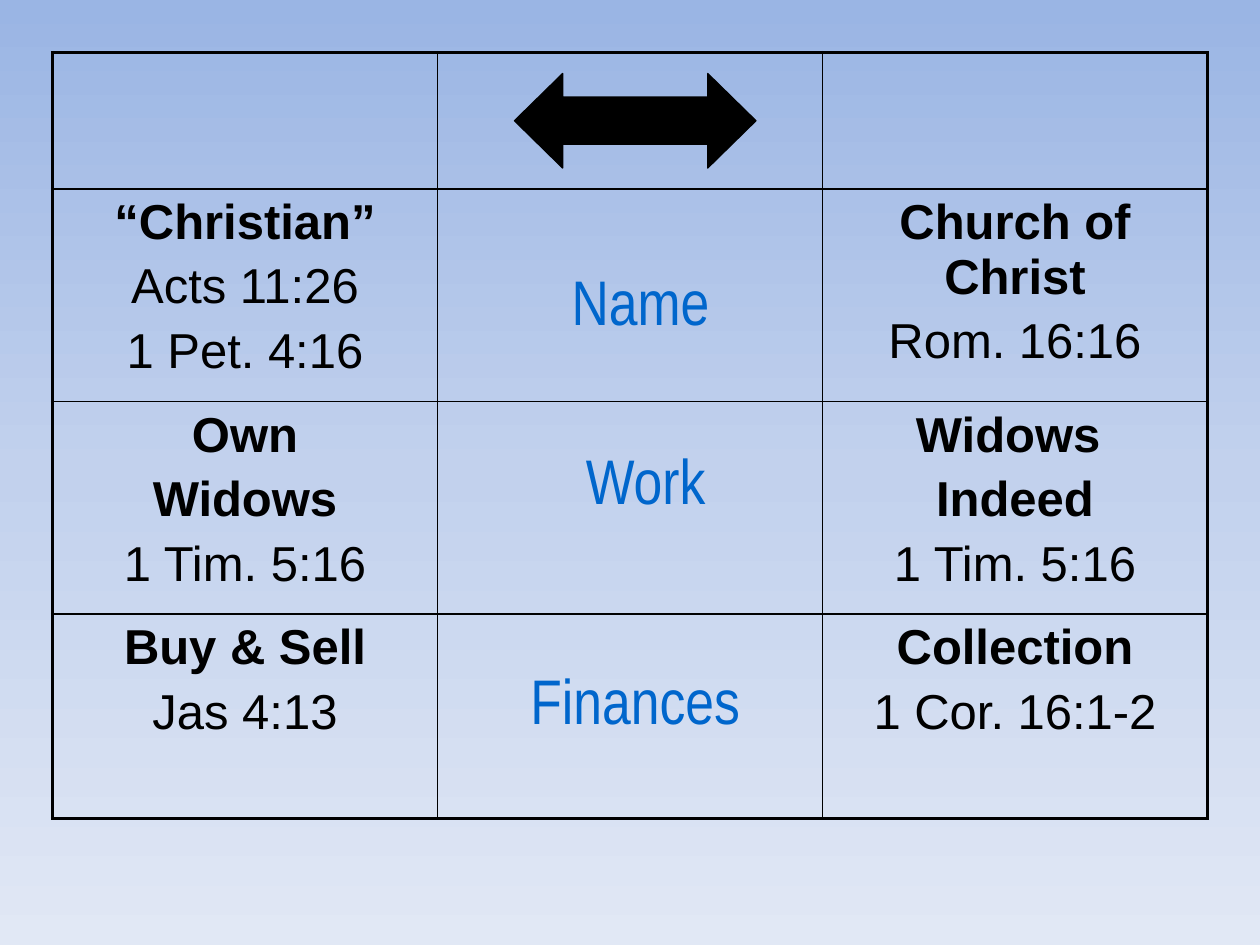
from copy import deepcopy
from dataclasses import dataclass

from lxml import etree
from pptx import Presentation
from pptx.dml.color import RGBColor
from pptx.enum.shapes import MSO_SHAPE
from pptx.enum.text import MSO_ANCHOR, PP_ALIGN
from pptx.oxml.ns import qn
from pptx.util import Pt

CENTER = PP_ALIGN.CENTER
MIDDLE = MSO_ANCHOR.MIDDLE
DOUBLE_ARROW = MSO_SHAPE.LEFT_RIGHT_ARROW
BLANK_LAYOUT = 6


@dataclass(frozen=True)
class Theme:
    ink: str = "000000"
    accent: str = "0066CC"
    background: tuple = ((0, "9AB5E4"), (50, "C2D1ED"), (100, "E1E8F5"))
    body_font: str = "Arial"
    label_font: str = "Arial Narrow"
    body_size: float = 28
    label_size: float = 36
    paragraph_gap: float = 5.6
    outer_border: float = 2.25
    inner_border: float = 1


class SlideBuilder:
    def __init__(self, slide, theme):
        self.slide = slide
        self.theme = theme

    def gradient_background(self):
        fill = self.slide.background.fill
        fill.gradient()
        fill.gradient_angle = 270
        stop_list = next(self.slide._element.iter(qn("a:gsLst")))
        stop_list.insert(1, deepcopy(stop_list[0]))
        for stop, (percent, color) in zip(fill.gradient_stops, self.theme.background):
            stop.position = percent / 100
            stop.color.rgb = RGBColor.from_string(color)

    def style_run(self, run, font, size, color, bold=False):
        run.font.name = font
        run.font.size = Pt(size)
        run.font.bold = bold
        run.font.color.rgb = RGBColor.from_string(color)

    def cell_text(self, cell, headings, references):
        """Fill a cell with bold headings followed by plain references."""
        theme = self.theme
        cell.text_frame.text = "\n".join(headings + references)
        for index, paragraph in enumerate(cell.text_frame.paragraphs):
            paragraph.alignment = CENTER
            paragraph.space_before = Pt(theme.paragraph_gap)
            for run in paragraph.runs:
                self.style_run(run, theme.body_font, theme.body_size, theme.ink,
                               bold=index < len(headings))

    def cell_borders(self, cell, outer_edges):
        """Draw all four borders; outer_edges maps a side to whether it is outside."""
        properties = cell._tc.get_or_add_tcPr()
        for position, (side, is_outer) in enumerate(outer_edges.items()):
            width = self.theme.outer_border if is_outer else self.theme.inner_border
            line = etree.Element(qn(f"a:ln{side}"), w=str(Pt(width)))
            fill = etree.SubElement(line, qn("a:solidFill"))
            etree.SubElement(fill, qn("a:srgbClr"), val=self.theme.ink)
            properties.insert(position, line)

    def table(self, left, top, column_width, row_heights, rows):
        row_count, column_count = len(rows), len(rows[0])
        table = self.slide.shapes.add_table(
            row_count, column_count, Pt(left), Pt(top),
            Pt(column_width * column_count), Pt(sum(row_heights))).table
        table.first_row = table.horz_banding = False
        for column in table.columns:
            column.width = Pt(column_width)
        for r, (height, contents) in enumerate(zip(row_heights, rows)):
            table.rows[r].height = Pt(height)
            for c, content in enumerate(contents):
                cell = table.cell(r, c)
                cell.fill.background()
                self.cell_borders(cell, {"L": c == 0, "R": c == column_count - 1,
                                         "T": r == 0, "B": r == row_count - 1})
                if content:
                    self.cell_text(cell, *content)

    def double_arrow(self, left, top, width, height):
        arrow = self.slide.shapes.add_shape(
            DOUBLE_ARROW, Pt(left), Pt(top), Pt(width), Pt(height))
        arrow.shadow.inherit = False
        arrow.adjustments[0] = 0.5
        arrow.adjustments[1] = 0.51
        color = RGBColor.from_string(self.theme.ink)
        arrow.fill.solid()
        arrow.fill.fore_color.rgb = color
        arrow.line.color.rgb = color
        arrow.line.width = Pt(0.75)

    def label(self, text, left, top, width, height):
        shape = self.slide.shapes.add_textbox(Pt(left), Pt(top), Pt(width), Pt(height))
        frame = shape.text_frame
        frame.word_wrap = False
        frame.vertical_anchor = MIDDLE
        frame.margin_bottom = Pt(8)
        frame.text = text
        paragraph = frame.paragraphs[0]
        paragraph.alignment = CENTER
        self.style_run(paragraph.runs[0], self.theme.label_font,
                       self.theme.label_size, self.theme.accent)


COMPARISON = [
    [None, None, None],
    [(["“Christian”"], ["Acts 11:26", "1 Pet. 4:16"]), None,
     (["Church of Christ"], ["Rom. 16:16"])],
    [(["Own", "Widows"], ["1 Tim. 5:16"]), None,
     (["Widows ", "Indeed"], ["1 Tim. 5:16"])],
    [(["Buy & Sell"], ["Jas 4:13"]), None,
     (["Collection"], ["1 Cor. 16:1-2"])],
]
LABELS = [
    ("Work", 312, 246, 114),
    ("Name", 306, 144, 120),
    ("Finances", 270, 372, 186),
]


def main():
    presentation = Presentation()
    presentation.slide_width = Pt(720)
    presentation.slide_height = Pt(540)
    slide = presentation.slides.add_slide(presentation.slide_layouts[BLANK_LAYOUT])
    builder = SlideBuilder(slide, Theme())
    builder.gradient_background()
    builder.table(30, 30, 220, [78, 121.5, 121.5, 116.75], COMPARISON)
    builder.double_arrow(294, 42, 138, 54)
    for text, left, top, width in LABELS:
        builder.label(text, left, top, width, 60)
    presentation.save("out.pptx")


if __name__ == "__main__":
    main()
